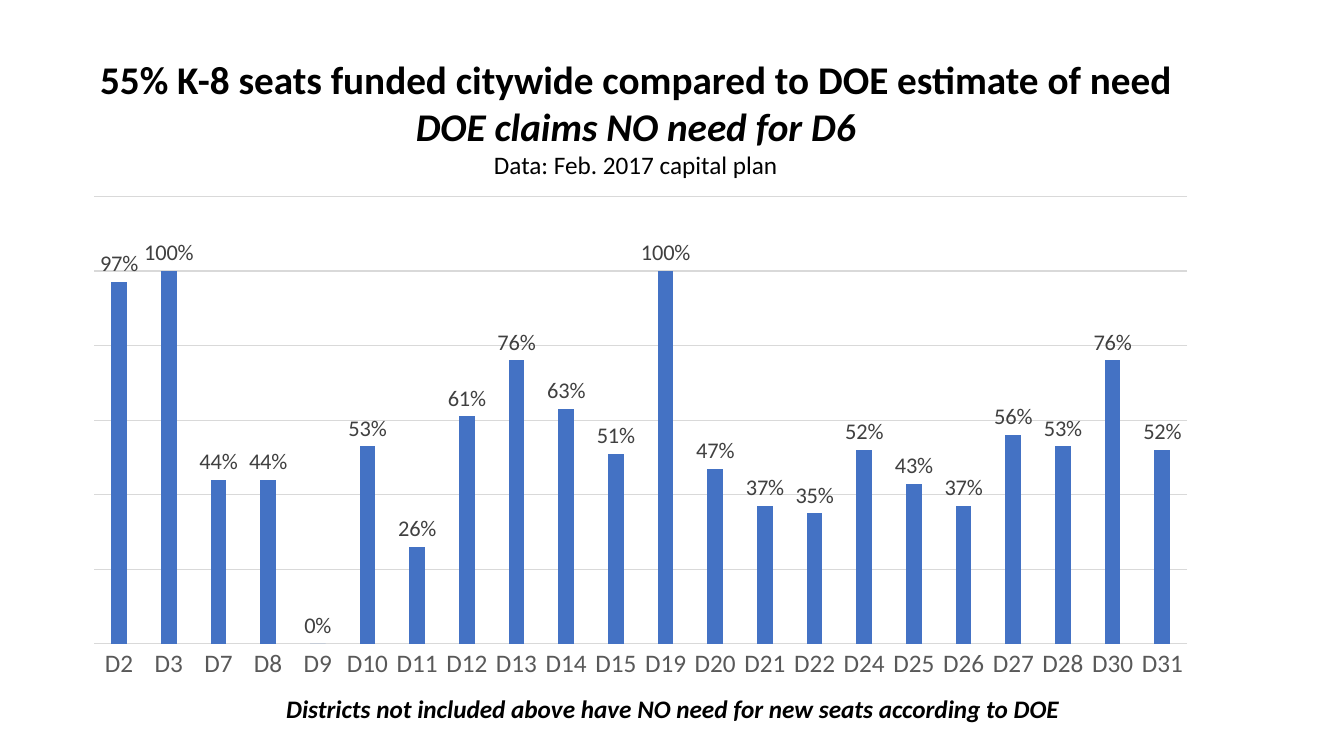
from pptx import Presentation
from pptx.chart.data import CategoryChartData
from pptx.dml.color import RGBColor
from pptx.enum.chart import XL_CHART_TYPE, XL_LABEL_POSITION, XL_TICK_LABEL_POSITION, XL_TICK_MARK
from pptx.enum.text import MSO_ANCHOR, MSO_AUTO_SIZE, PP_ALIGN
from pptx.util import Emu, Pt

PX = 9144
FONT = "Calibri"
BLACK, GREY, DARK, RULE, BLUE = "000000", "595959", "404040", "D9D9D9", "4472C4"

RATES = {
    "D2": 0.97, "D3": 1, "D7": 0.44, "D8": 0.44, "D9": 0, "D10": 0.53,
    "D11": 0.26, "D12": 0.61, "D13": 0.76, "D14": 0.63, "D15": 0.51,
    "D19": 1, "D20": 0.47, "D21": 0.37, "D22": 0.35, "D24": 0.52,
    "D25": 0.43, "D26": 0.37, "D27": 0.56, "D28": 0.53, "D30": 0.76,
    "D31": 0.52,
}
TITLE = [
    ("55% K-8 seats funded citywide compared to DOE estimate of need",
     {"size": Pt(28), "bold": True, "italic": False}),
    ("DOE claims NO need for D6",
     {"size": Pt(28), "bold": True, "italic": True}),
    ("Data: Feb. 2017 capital plan",
     {"size": Pt(18), "bold": False, "italic": False}),
]
NOTE = [
    ("Districts not included above have NO need for new seats according to DOE",
     {"size": Pt(18), "bold": True, "italic": True}),
]


def tint(code):
    return RGBColor.from_string(code)


def apply(item, values):
    for name, value in values.items():
        setattr(item, name, value)


class Deck:
    def __init__(self, wide, high):
        self.file = Presentation()
        apply(self.file, {"slide_width": Emu(wide * PX), "slide_height": Emu(high * PX)})
        self.slide = self.file.slides.add_slide(self.file.slide_layouts[5])

    def font(self, font, color, **values):
        apply(font, {"name": FONT, **values})
        font.color.rgb = tint(color)

    def rule(self, line):
        line.color.rgb = tint(RULE)
        line.width = Pt(0.75)

    def fill(self, frame, lines, align):
        apply(frame, {"word_wrap": True, "vertical_anchor": MSO_ANCHOR.TOP,
                      "auto_size": MSO_AUTO_SIZE.SHAPE_TO_FIT_TEXT})
        for row, (text, style) in enumerate(lines):
            para = frame.add_paragraph() if row else frame.paragraphs[0]
            apply(para, {"alignment": align, "line_spacing": 1.0, "space_before": Pt(0)})
            run = para.add_run()
            run.text = text
            self.font(run.font, BLACK, **style)

    def title(self, box, lines):
        shape = self.slide.shapes.title
        sides = ("left", "top", "width", "height")
        apply(shape, {side: Emu(n * PX) for side, n in zip(sides, box)})
        self.fill(shape.text_frame, lines, PP_ALIGN.CENTER)

    def text(self, box, lines):
        shape = self.slide.shapes.add_textbox(*(Emu(n * PX) for n in box))
        self.fill(shape.text_frame, lines, PP_ALIGN.LEFT)

    def chart(self, box, rates):
        data = CategoryChartData(number_format="0%")
        data.categories = list(rates)
        data.add_series("Series 1", list(rates.values()))
        place = [Emu(n * PX) for n in box]
        chart = self.slide.shapes.add_chart(XL_CHART_TYPE.COLUMN_CLUSTERED, *place, data).chart
        apply(chart, {"has_legend": False, "has_title": False})
        self.font(chart.font, BLACK, size=Pt(10))

        plot = chart.plots[0]
        apply(plot, {"gap_width": 219, "overlap": -27, "vary_by_categories": False,
                     "has_data_labels": True})
        labels = plot.data_labels
        apply(labels, {"show_value": True, "number_format": "0%",
                       "number_format_is_linked": False,
                       "position": XL_LABEL_POSITION.OUTSIDE_END})
        self.font(labels.font, DARK, size=Pt(16))
        bars = plot.series[0].format.fill
        bars.solid()
        bars.fore_color.rgb = tint(BLUE)

        base = chart.category_axis
        apply(base, {"major_tick_mark": XL_TICK_MARK.NONE, "minor_tick_mark": XL_TICK_MARK.NONE,
                     "tick_label_position": XL_TICK_LABEL_POSITION.NEXT_TO_AXIS})
        self.font(base.tick_labels.font, GREY, size=Pt(18))
        self.rule(base.format.line)

        scale = chart.value_axis
        apply(scale, {"visible": False, "minimum_scale": 0, "maximum_scale": 1.2,
                      "major_unit": 0.2, "has_major_gridlines": True})
        apply(scale.tick_labels, {"number_format": "0%", "number_format_is_linked": False})
        self.rule(scale.major_gridlines.format.line)


def main():
    deck = Deck(1333, 750)
    deck.chart((71, 185, 1129, 498), RATES)
    deck.text((274, 683, 1074, 71), NOTE)
    deck.title((71, 50, 1119, 135), TITLE)
    deck.file.save("out.pptx")


if __name__ == "__main__":
    main()
